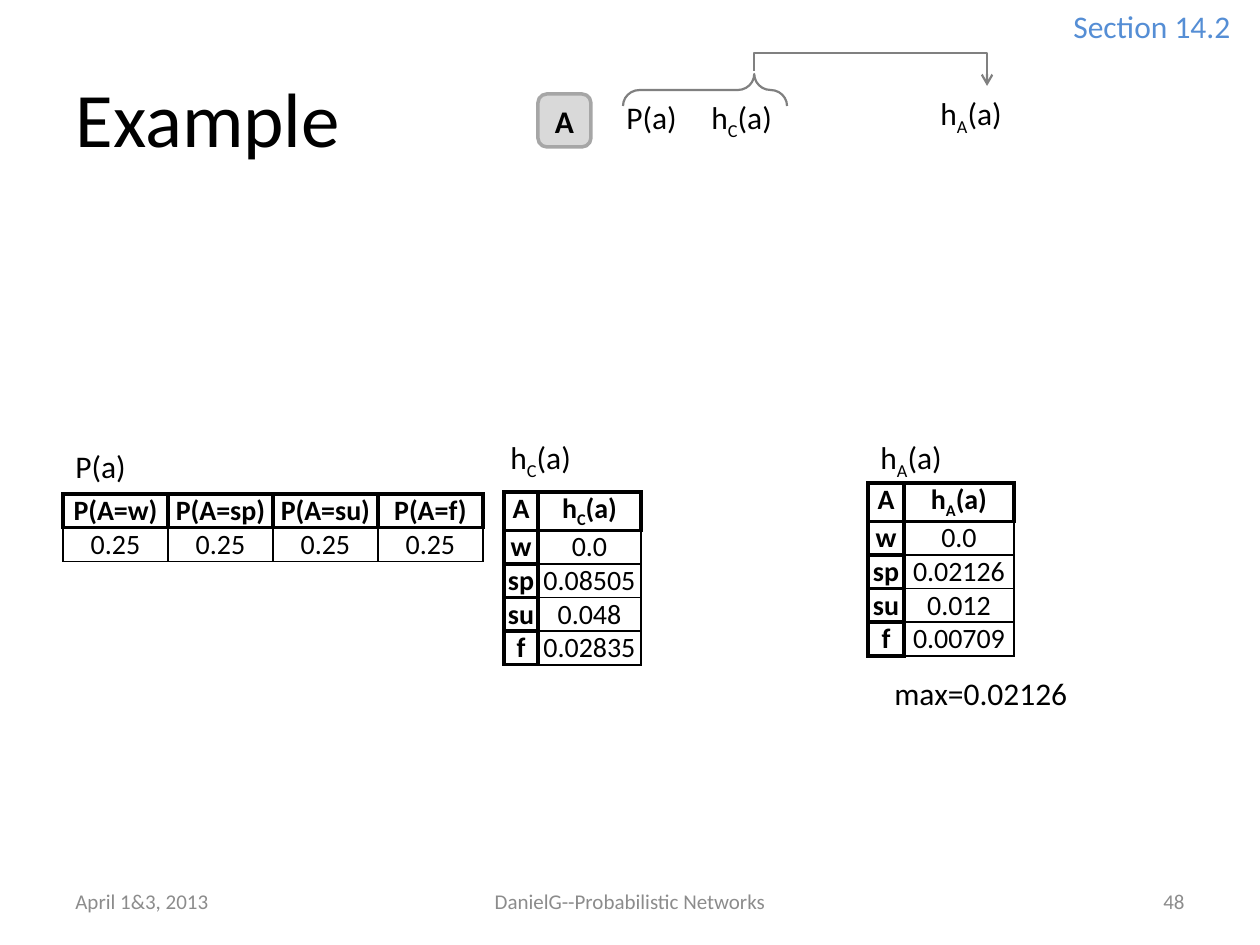
from dataclasses import dataclass

from lxml import etree
from pptx import Presentation
from pptx.dml.color import RGBColor
from pptx.enum.shapes import MSO_CONNECTOR, MSO_SHAPE
from pptx.enum.text import MSO_ANCHOR, MSO_AUTO_SIZE, PP_ALIGN
from pptx.oxml.ns import qn
from pptx.util import Emu, Pt

FONT = "Calibri"
BLACK, GREY, FOOTER_GREY, BLUE = "000000", "808080", "8C8C8C", "558ED5"
LEFT, CENTER, RIGHT = PP_ALIGN.LEFT, PP_ALIGN.CENTER, PP_ALIGN.RIGHT
ROW_HEIGHT = 26
THICK, THIN = 2.25, 1


@dataclass
class Label:
    text: str
    left: int
    top: int
    width: int
    height: int = 50
    size: int = 18
    color: str = BLACK
    align: PP_ALIGN = LEFT
    anchor: MSO_ANCHOR = MSO_ANCHOR.TOP
    wrap: bool = True


@dataclass
class Grid:
    left: int
    top: int
    columns: list[int]
    rows: list[list[str]]
    row_labels: bool = True


def px(length: int) -> Emu:
    return Emu(round(length * 914400 / 126))


def rgb(value: str) -> RGBColor:
    return RGBColor.from_string(value)


def write(para, text: str, size: int, color=BLACK, bold=False, align=LEFT) -> None:
    """Fill a paragraph; every second piece between bars is a subscript."""
    para.alignment = align
    for index, piece in enumerate(text.split("|")):
        span = para.add_run()
        span.text = piece
        span.font.name = FONT
        span.font.size = Pt(size)
        span.font.bold = bold
        span.font.color.rgb = rgb(color)
        if index % 2:
            span.font._element.set("baseline", "-25000")


def add_label(page, label: Label) -> None:
    box = page.shapes.add_textbox(px(label.left), px(label.top), px(label.width), px(label.height))
    frame = box.text_frame
    frame.word_wrap = label.wrap
    frame.vertical_anchor = label.anchor
    if label.anchor == MSO_ANCHOR.TOP:
        frame.auto_size = MSO_AUTO_SIZE.SHAPE_TO_FIT_TEXT
    write(frame.paragraphs[0], label.text, label.size, label.color, align=label.align)


def add_border(cell, side: str, weight: float) -> None:
    line = etree.SubElement(cell._tc.get_or_add_tcPr(), qn(f"a:ln{side}"), w=str(Pt(weight)))
    fill = etree.SubElement(line, qn("a:solidFill"))
    etree.SubElement(fill, qn("a:srgbClr"), val=BLACK)


def add_grid(page, grid: Grid) -> None:
    row_count = len(grid.rows)
    frame = page.shapes.add_table(
        row_count, len(grid.columns), px(grid.left), px(grid.top),
        px(sum(grid.columns)), px(ROW_HEIGHT * row_count))
    table = frame.table
    table.first_row = table.horz_banding = False
    for column, width in zip(table.columns, grid.columns):
        column.width = px(width)

    def is_heading(row: int, column: int) -> bool:
        return row == 0 or (grid.row_labels and column == 0)

    for row, texts in enumerate(grid.rows):
        for column, text in enumerate(texts):
            cell = table.cell(row, column)
            cell.margin_left = cell.margin_right = cell.margin_top = cell.margin_bottom = 0
            heading = is_heading(row, column)
            write(cell.text_frame.paragraphs[0], text, 16, bold=heading, align=CENTER)
            left_thick = heading or (column > 0 and is_heading(row, column - 1))
            top_thick = heading or is_heading(row - 1, column)
            for side, thick in (("L", left_thick), ("R", heading), ("T", top_thick), ("B", heading)):
                add_border(cell, side, THICK if thick else THIN)
            cell.fill.background()


def add_node(page) -> None:
    node = page.shapes.add_shape(MSO_SHAPE.ROUNDED_RECTANGLE, px(538), px(94), px(53), px(53))
    node.shadow.inherit = False
    node.fill.solid()
    node.fill.fore_color.rgb = rgb("D9D9D9")
    node.line.color.rgb = rgb("A6A6A6")
    node.line.width = Pt(2)
    node.text_frame.vertical_anchor = MSO_ANCHOR.MIDDLE
    write(node.text_frame.paragraphs[0], "A", 18, bold=True, align=CENTER)


def add_brace(page) -> None:
    brace = page.shapes.add_shape(MSO_SHAPE.LEFT_BRACE, px(689), px(8), px(32), px(164))
    brace.shadow.inherit = False
    brace.rotation = 90
    brace.adjustments[0] = 0.58
    brace.adjustments[1] = 0.2
    brace.fill.background()
    brace.line.color.rgb = rgb(GREY)
    brace.line.width = Pt(1.25)


def add_arrow(page) -> None:
    """Elbow arrow rising from the brace tip and dropping onto the result."""
    arrow = page.shapes.add_connector(MSO_CONNECTOR.ELBOW, px(878), px(-38), px(863), px(195))
    arrow.line.color.rgb = rgb(GREY)
    arrow.line.width = Pt(1.25)
    properties = arrow._element.spPr
    properties.find(qn("a:xfrm")).set("rot", str(270 * 60000))
    guides = properties.find(qn("a:prstGeom")).find(qn("a:avLst"))
    etree.SubElement(guides, qn("a:gd"), name="adj1", fmla="val -118000")
    etree.SubElement(properties.find(qn("a:ln")), qn("a:tailEnd"), type="arrow")
    etree.SubElement(properties, qn("a:effectLst"))


def message_grid(left: int, top: int, columns: list[int], name: str, values: list[str]) -> Grid:
    rows = [["A", name], *map(list, zip(["w", "sp", "su", "f"], values))]
    return Grid(left, top, columns, rows)


def footer(text: str, left: int, width: int, align: PP_ALIGN) -> Label:
    return Label(text, left, 876, width, 50, 12, FOOTER_GREY, align, MSO_ANCHOR.MIDDLE)


LABELS = [
    footer("April 1&3, 2013", 63, 294, LEFT),
    footer("DanielG--Probabilistic Networks", 430, 400, CENTER),
    footer("48", 903, 294, RIGHT),
    Label("P(a)", 614, 92, 136),
    Label("h|C|(a)", 699, 92, 118),
    Label("h|A|(a)", 928, 88, 118),
    Label("P(a)", 63, 441, 136),
    Label("h|C|(a)", 498, 432, 118),
    Label("h|A|(a)", 868, 432, 118),
    Label("max=0.02126", 882, 668, 199),
    Label("Section 14.2", 1061, 1, 192, color=BLUE, wrap=False),
]
GRIDS = [
    Grid(63, 494, [105] * 4,
         [[f"P(A={season})" for season in ("w", "sp", "su", "f")], ["0.25"] * 4], False),
    message_grid(868, 483, [36, 110], "h|A|(a)", ["0.0", "0.02126", "0.012", "0.00709"]),
    message_grid(504, 492, [34, 103], "h|C|(a)", ["0.0", "0.08505", "0.048", "0.02835"]),
]


def main() -> None:
    deck = Presentation()
    deck.slide_width, deck.slide_height = px(1260), px(945)
    page = deck.slides.add_slide(deck.slide_layouts[5])
    title = page.shapes.title
    title.left, title.top, title.width, title.height = px(63), px(38), px(1134), px(158)
    title.text_frame.vertical_anchor = MSO_ANCHOR.MIDDLE
    write(title.text_frame.paragraphs[0], "Example", 44)
    add_node(page)
    add_brace(page)
    add_arrow(page)
    for label in LABELS:
        add_label(page, label)
    for grid in GRIDS:
        add_grid(page, grid)
    deck.save("out.pptx")


if __name__ == "__main__":
    main()
